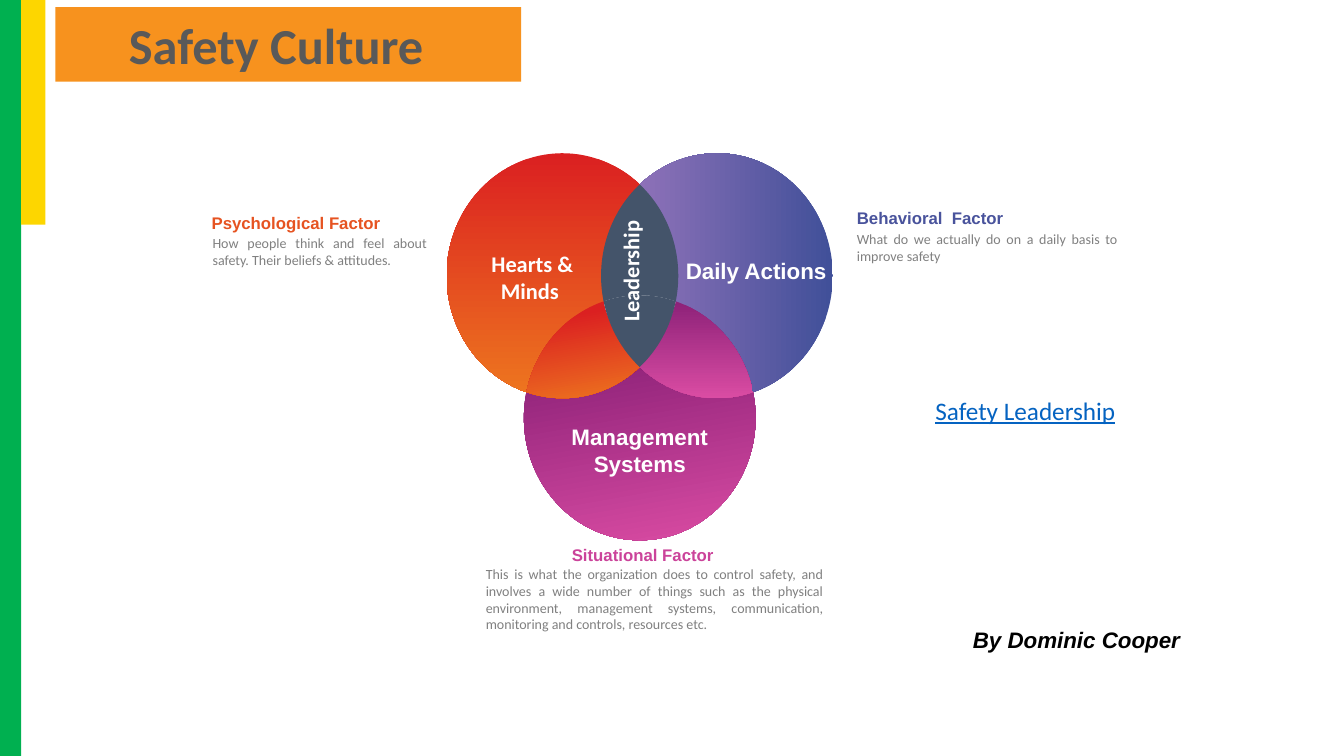
import copy
import math
from dataclasses import dataclass

import pptx
import pptx.util
import pptx.dml.color
import pptx.enum.shapes
import pptx.enum.text
import pptx.oxml.ns

Inches = pptx.util.Inches
ALIGN = pptx.enum.text.PP_ALIGN
ANCHOR = pptx.enum.text.MSO_ANCHOR


@dataclass(frozen=True)
class Theme:
    """Colours, fonts and type sizes of the slide."""
    green: str = "00B050"
    yellow: str = "FDD600"
    orange: str = "F7921E"
    dark: str = "595959"
    gray: str = "808080"
    white: str = "FFFFFF"
    black: str = "000000"
    link: str = "0563C1"
    slate: str = "44546A"
    mind: str = "E65321"
    act: str = "49539C"
    scene: str = "CB439A"
    warm: tuple = ("DB2021", "ED741F")
    cool: tuple = ("415099", "8D71B8")
    plum: tuple = ("8E2279", "DA4CA3")
    sans: str = "Arial"
    body: str = "Calibri"
    title: int = 36
    large: int = 18
    label: int = 16
    head: int = 12
    small: int = 10


THEME = Theme()


def tint(code):
    """Turn a hex code into a colour."""
    return pptx.dml.color.RGBColor.from_string(code)


def write(frame, text, size=THEME.label, font=THEME.sans, color=THEME.white,
          bold=True, italic=False, under=False, align=ALIGN.LEFT,
          anchor=ANCHOR.TOP, turn=None):
    """Fill a text frame with one formatted paragraph."""
    frame.word_wrap = True
    frame.auto_size = pptx.enum.text.MSO_AUTO_SIZE.NONE
    frame.vertical_anchor = anchor
    if turn:
        frame._txBody.bodyPr.set("vert", turn)
    line = frame.paragraphs[0]
    line.alignment = align
    run = line.add_run()
    run.text = text
    run.font.size = pptx.util.Pt(size)
    run.font.name = font
    run.font.color.rgb = tint(color)
    run.font.bold, run.font.italic, run.font.underline = bold, italic, under


def label(slide, box, text, **form):
    """Add a text box at the given box."""
    write(slide.shapes.add_textbox(*map(Inches, box)).text_frame, text, **form)


def paint(shape, color):
    """Give a shape a flat fill without line or shadow."""
    shape.shadow.inherit = False
    shape.line.fill.background()
    shape.fill.solid()
    shape.fill.fore_color.rgb = tint(color)


def blend(shape, colors, start, angle):
    """Give a shape a two-colour gradient, its angle taken clockwise."""
    shape.fill.gradient()
    shape.fill.gradient_angle = -angle % 360
    for stop, color, place in zip(shape.fill.gradient_stops, colors, (start, 1)):
        stop.color.rgb = tint(color)
        stop.position = place


def edge(slide, left, top, height):
    """Draw the two bars on the left side."""
    for x, width, tall, color in ((left, 0.21, height, THEME.green),
                                  (left + 0.21, 0.24, 2.23, THEME.yellow)):
        bar = slide.shapes.add_shape(pptx.enum.shapes.MSO_SHAPE.RECTANGLE,
                                     *map(Inches, (x, top, width, tall)))
        paint(bar, color)


def banner(slide, box, text):
    """Set the title on its orange band."""
    title = slide.shapes.title
    title.left, title.top, title.width, title.height = map(Inches, box)
    title.fill.solid()
    title.fill.fore_color.rgb = tint(THEME.orange)
    title.text_frame.margin_right = Inches(0.34)
    write(title.text_frame, text, size=THEME.title, font=THEME.body,
          color=THEME.dark, align=ALIGN.CENTER, anchor=ANCHOR.MIDDLE)


def cross(one, two, rx, ry):
    """Find both points where two equal ellipses meet."""
    dx, dy = (two[0] - one[0]) / rx, (two[1] - one[1]) / ry
    gap = math.hypot(dx, dy)
    rise = math.sqrt(1 - gap * gap / 4) / gap
    mx, my = (one[0] + two[0]) / 2, (one[1] + two[1]) / 2
    return sorted(((mx + s * rise * dy * rx, my - s * rise * dx * ry)
                   for s in (1, -1)), key=lambda point: point[1])


def arc(hub, start, end, sign, rx, ry):
    """List the curves along an ellipse, cut where it turns."""
    first, last = (math.atan2((y - hub[1]) / ry, (x - hub[0]) / rx)
                   for x, y in (start, end))
    last = first + sign * ((sign * (last - first)) % math.tau)
    turns = (i * math.pi / 2 for i in range(-8, 9))
    cuts = sorted([first, last] + [t for t in turns if
                                   min(first, last) < t < max(first, last)],
                  reverse=sign < 0)

    def spot(angle, pull):
        """Place a point off the ellipse along its tangent."""
        return (Inches(hub[0] + rx * (math.cos(angle) - pull * math.sin(angle))),
                Inches(hub[1] + ry * (math.sin(angle) + pull * math.cos(angle))))

    curves = []
    for a, b in zip(cuts, cuts[1:]):
        pull = 4 / 3 * math.tan((b - a) / 4)
        curves.append((spot(a, pull), spot(b, -pull), spot(b, 0)))
    return curves


def outline(slide, curves):
    """Build a closed shape from a chain of curves."""
    pen = slide.shapes.build_freeform(*curves[-1][2], scale=1.0)
    pen.add_line_segments([curve[2] for curve in curves], close=True)
    shape = pen.convert_to_shape()
    qn = pptx.oxml.ns.qn
    for line, curve in zip(list(shape._element.iter(qn("a:lnTo"))), curves):
        bend = line.makeelement(qn("a:cubicBezTo"))
        for x, y in curve:
            point = copy.deepcopy(line[0])
            point.set("x", str(x - shape.left))
            point.set("y", str(y - shape.top))
            bend.append(point)
        line.getparent().replace(line, bend)
    return shape


def venn(slide, left, top, width, height):
    """Draw three crossing circles as seven filled regions."""
    rx, ry = width * 0.3, height * 0.3165
    hubs = {"H": (left + rx, top + ry),
            "D": (left + width - rx, top + ry),
            "M": (left + width / 2, top + height - ry)}
    nodes = {}
    for names, pair in (("TB", "HD"), ("Rl", "HM"), ("Lr", "DM")):
        nodes.update(zip(names, cross(hubs[pair[0]], hubs[pair[1]], rx, ry)))
    for route, fill in (
            ("T+D r-M R-H", (THEME.cool, 0.01, 180)),
            ("T-H l+M L+D", (THEME.warm, 0, 90)),
            ("T+H R-M L+D", THEME.slate),
            ("B-D r+M l-H", (THEME.plum, 0.01, 80)),
            ("R+M r+D B-H", (THEME.plum, 0.01, 90)),
            ("l+M L-D B+H", (THEME.warm, 0.18, 80)),
            ("L+M R+H B+D", THEME.slate)):
        legs = route.split()
        curves = []
        for leg, after in zip(legs, legs[1:] + legs[:1]):
            curves += arc(hubs[leg[2]], nodes[leg[0]], nodes[after[0]],
                          1 if leg[1] == "+" else -1, rx, ry)
        shape = outline(slide, curves)
        paint(shape, fill if isinstance(fill, str) else THEME.slate)
        if not isinstance(fill, str):
            blend(shape, *fill)
    for dx, dy, w, h, text, form in (
            (0.08, 0.91, 1.54, 0.64, "Hearts & Minds ",
             dict(font=THEME.body, align=ALIGN.CENTER)),
            (2.22, 0.98, 1.7, 0.37, "Daily Actions", dict(align=ALIGN.CENTER)),
            (1.09, 2.63, 1.65, 0.64, "Management Systems",
             dict(align=ALIGN.CENTER)),
            (1.64, 0.45, 0.47, 1.32, "Leadership",
             dict(font=THEME.body, turn="vert270"))):
        label(slide, (left + dx, top + dy, w, h), text, **form)


def factor(slide, box, head, text, color, shift=0, drop=0.22, align=ALIGN.LEFT):
    """Write a coloured heading above its short text."""
    left, top, width, height = box
    label(slide, (left + shift, top, 2.29, 0.3), head, size=THEME.head,
          color=color, align=align)
    label(slide, (left, top + drop, width, height - drop), text,
          size=THEME.small, font=THEME.body, color=THEME.gray, bold=False,
          align=ALIGN.JUSTIFY)


def main():
    """Build and save the slide."""
    deck = pptx.Presentation()
    deck.slide_width, deck.slide_height = Inches(13.33), Inches(7.5)
    slide = deck.slides.add_slide(deck.slide_layouts[5])
    edge(slide, 0, 0, 7.5)
    banner(slide, (0.55, 0.07, 4.62, 0.74), "Safety Culture")
    venn(slide, 4.43, 1.52, 3.83, 3.84)
    factor(slide, (2.01, 2.06, 2.32, 0.66), "Psychological Factor",
           "How people think and feel about safety. Their beliefs & attitudes.",
           THEME.mind, shift=-0.01)
    factor(slide, (8.4, 2.01, 2.78, 0.67), "Behavioral  Factor",
           "What do we actually do on a daily basis to improve safety",
           THEME.act, drop=0.23)
    factor(slide, (4.72, 5.36, 3.54, 1.14), "Situational Factor",
           "This is what the organization does to control safety, and involves "
           "a wide number of things such as the physical environment, "
           "management systems, communication, monitoring and controls, "
           "resources etc.",
           THEME.scene, shift=0.51, drop=0.2, align=ALIGN.CENTER)
    label(slide, (9.02, 3.87, 2.3, 0.5), "Safety Leadership", size=THEME.large,
          font=THEME.body, color=THEME.link, bold=False, under=True,
          align=ALIGN.CENTER)
    label(slide, (9.55, 6.16, 2.58, 0.37), "By Dominic Cooper",
          color=THEME.black, italic=True)
    deck.save("out.pptx")


if __name__ == "__main__":
    main()
